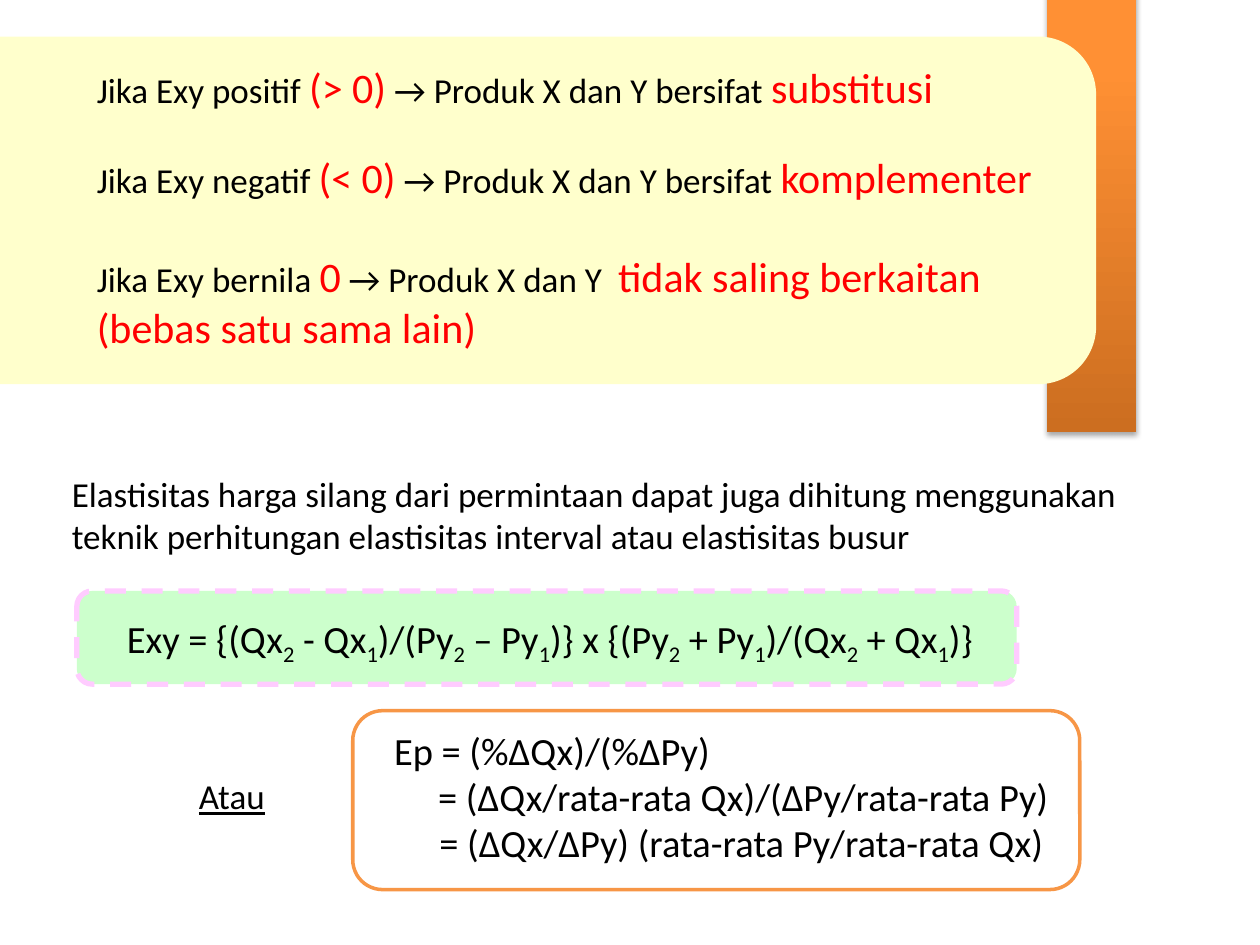
from copy import deepcopy

from pptx import Presentation
from pptx.dml.color import RGBColor
from pptx.enum.dml import MSO_LINE_DASH_STYLE as Dash
from pptx.enum.shapes import MSO_SHAPE as Shape
from pptx.enum.text import MSO_AUTO_SIZE as AutoSize
from pptx.oxml import parse_xml
from pptx.oxml.ns import nsdecls, qn
from pptx.util import Pt

PX = 9144
BLACK, RED, ORANGE = "000000", "FF0000", "F79646"


def emu(*lengths):
    return [length * PX for length in lengths]


def color(value):
    return RGBColor.from_string(value)


class SlideBuilder:
    """Holds the text style and the current slide, and adds elements to it."""

    def __init__(self, page, font="Calibri", size=20):
        self.page, self.font, self.size = page, font, size

    def style(self, font, size=None, ink=BLACK):
        font.name = self.font
        font.size = Pt(size or self.size)
        font.color.rgb = color(ink)

    def panel(self, bounds, fill=None, line=None, width=2, dash=None, kind=Shape.ROUNDED_RECTANGLE):
        box = self.page.shapes.add_shape(kind, *emu(*bounds))
        box.shadow.inherit = False
        if fill:
            box.fill.solid()
            box.fill.fore_color.rgb = color(fill)
        if line:
            box.line.color.rgb = color(line)
            box.line.width = Pt(width)
            box.line.dash_style = dash
        else:
            box.line.fill.background()
        return box

    def gradient_bar(self, bounds, stops):
        box = self.panel(bounds, kind=Shape.RECTANGLE)
        box.fill.gradient()
        box.fill.gradient_angle = 90
        properties = box._element.spPr
        stop_list = properties.find(".//" + qn("a:gsLst"))
        while len(stop_list) < len(stops):
            stop_list.append(deepcopy(stop_list[0]))
        for stop, (position, value) in zip(box.fill.gradient_stops, stops):
            stop.position = position
            stop.color.rgb = color(value)
        properties.find(qn("a:effectLst")).append(parse_xml(
            f'<a:outerShdw {nsdecls("a")} blurRad="39370" dist="22860" dir="5400000" rotWithShape="0">'
            '<a:srgbClr val="000000"><a:alpha val="35000"/></a:srgbClr></a:outerShdw>'))

    def text_box(self, bounds):
        frame = self.page.shapes.add_textbox(*emu(*bounds)).text_frame
        frame.word_wrap = True
        frame.auto_size = AutoSize.SHAPE_TO_FIT_TEXT
        return frame

    def body(self, bounds, text):
        box = self.page.placeholders[1]
        box.left, box.top, box.width, box.height = emu(*bounds)
        para = box.text_frame.paragraphs[0]
        para.text = text
        properties = para._p.get_or_add_pPr()
        properties.set("marL", "0")
        properties.set("indent", "0")
        properties.append(parse_xml(f'<a:buNone {nsdecls("a")}/>'))
        self.style(para.font)

    def highlighted(self, bounds, *texts):
        """Alternates plain text with larger red text."""
        para = self.text_box(bounds).paragraphs[0]
        for index, text in enumerate(texts):
            span = para.add_run()
            span.text = text
            self.style(span.font, *((24, RED) if index % 2 else (self.size, BLACK)))

    def formula(self, bounds, text, size):
        """Lowers the digit after each underscore."""
        para = self.text_box(bounds).paragraphs[0]
        self.style(para.font, size)
        first, *rest = text.split("_")
        para.add_run().text = first
        for part in rest:
            digit = para.add_run()
            digit.text = part[0]
            digit._r.get_or_add_rPr().set("baseline", "-25000")
            para.add_run().text = part[1:]

    def lines(self, bounds, rows, size=None, underline=None):
        frame = self.text_box(bounds)
        for index, (text, tab) in enumerate(rows):
            para = frame.add_paragraph() if index else frame.paragraphs[0]
            para.text = text
            if tab:
                para._p.get_or_add_pPr().append(parse_xml(
                    f'<a:tabLst {nsdecls("a")}><a:tab pos="{tab * PX}" algn="l"/></a:tabLst>'))
            self.style(para.font, size)
            para.font.underline = underline


def main():
    deck = Presentation()
    deck.slide_width, deck.slide_height = emu(1000, 750)
    page = deck.slides.add_slide(deck.slide_layouts[1])
    title = page.shapes.title._element
    title.getparent().remove(title)
    builder = SlideBuilder(page)

    builder.panel((280, 564, 577, 142), "FFFFFF", ORANGE)
    builder.panel((61, 469, 746, 74), "CCFFCC", "FFCCFF", 3, Dash.DASH)
    builder.gradient_bar((831, -19, 71, 362), [(0, "CC6E20"), (0.8, "FF9034"), (1, "FF9136")])
    builder.panel((-67, 29, 937, 276), "FFFFCC")

    builder.body((47, 370, 855, 92),
                 "Elastisitas harga silang dari permintaan dapat juga dihitung menggunakan "
                 "teknik perhitungan elastisitas interval atau elastisitas busur")
    relation = " → Produk X dan Y bersifat "
    builder.highlighted((67, 44, 819, 50), "Jika Exy positif ", "(> 0)", relation, "substitusi")
    builder.highlighted((67, 115, 835, 50), "Jika Exy negatif ", "(< 0)", relation, "komplementer")
    builder.highlighted((67, 194, 764, 91), "Jika Exy bernila ", "0", " → Produk X dan Y  ",
                        "tidak saling berkaitan (bebas satu sama lain)")
    builder.formula((91, 483, 717, 47),
                    "Exy = {(Qx_2 - Qx_1)/(Py_2 – Py_1)} x {(Py_2 + Py_1)/(Qx_2 + Qx_1)}", 22)
    builder.lines((303, 572, 563, 121), [
        ("Ep = (%ΔQx)/(%ΔPy)", None),
        ("\t= (ΔQx/rata-rata Qx)/(ΔPy/rata-rata Py)", 35),
        ("\t = (ΔQx/ΔPy) (rata-rata Py/rata-rata Qx)", 29),
    ], 22)
    builder.lines((148, 610, 86, 44), [("Atau\t", 65)], underline=True)
    deck.save("out.pptx")


if __name__ == "__main__":
    main()
